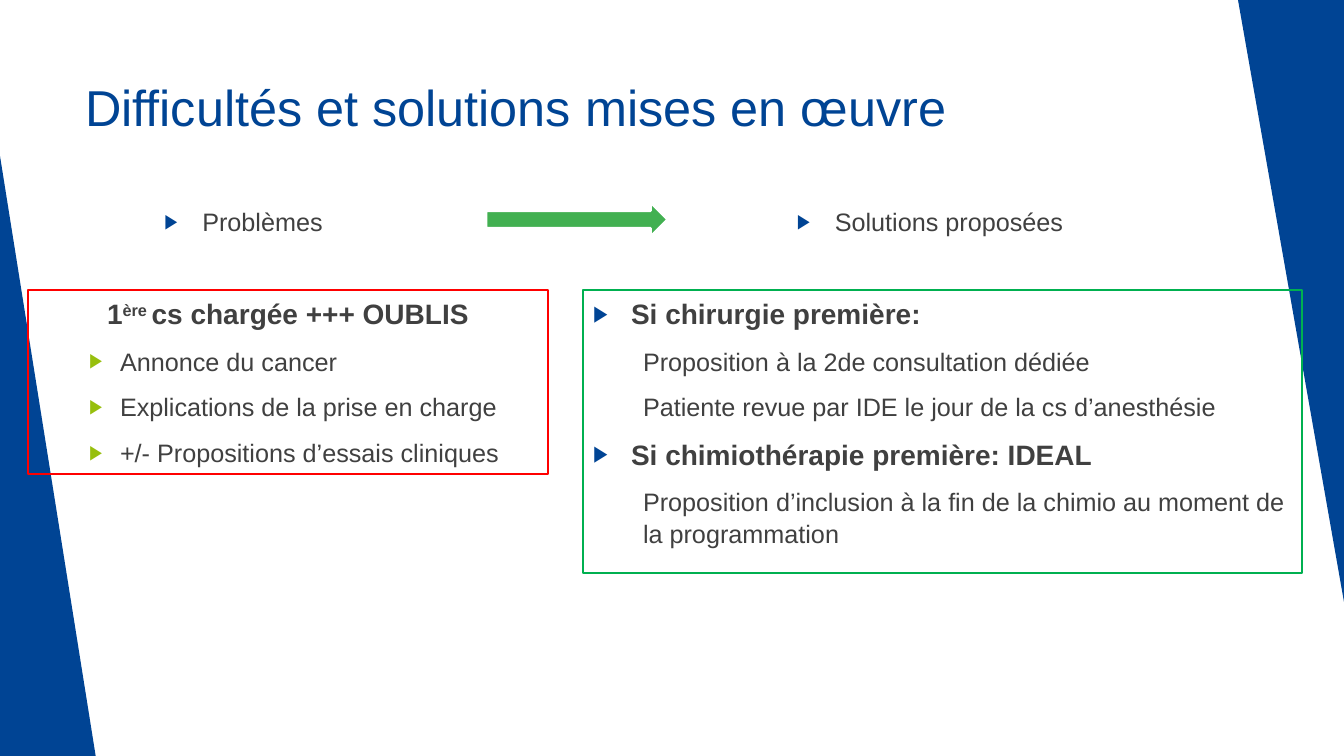
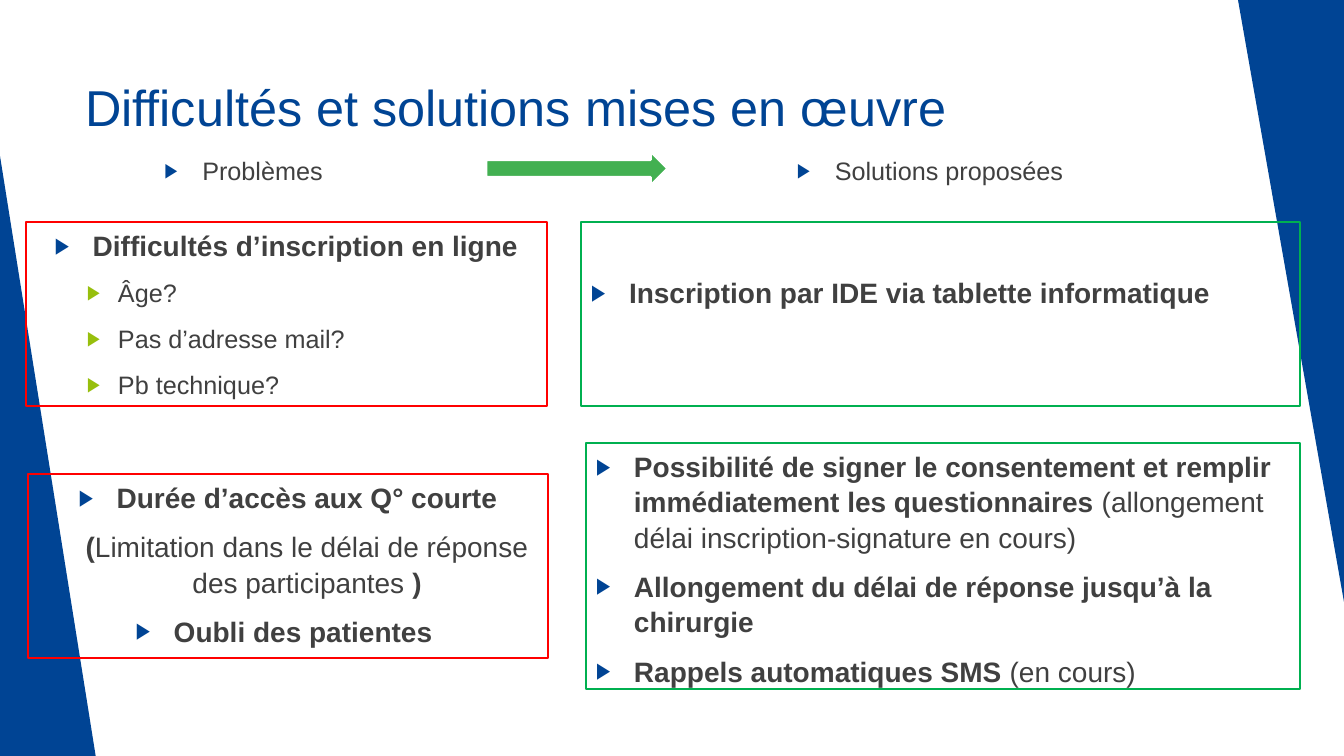
from dataclasses import dataclass
from typing import Optional

from lxml.etree import SubElement
from pptx import Presentation
from pptx.dml.color import RGBColor
from pptx.enum.shapes import MSO_SHAPE as Preset
from pptx.enum.text import MSO_ANCHOR as Anchor, MSO_AUTO_SIZE as AutoSize, PP_ALIGN as Align
from pptx.oxml.ns import qn
from pptx.util import Emu, Pt

EMU_PER_PX = 914400 / 100.8
FONT = "Arial"
TITLE = "Difficultés et solutions mises en œuvre"
COMPARISON_LAYOUT = 4

BLUE = RGBColor(0x00, 0x44, 0x94)
LIME = RGBColor(0x97, 0xBF, 0x0D)
TEXT_GREY = RGBColor(0x40, 0x40, 0x40)
PROBLEM_RED = RGBColor(0xFF, 0x00, 0x00)
SOLUTION_GREEN = RGBColor(0x00, 0xB0, 0x50)
ARROW_GREEN = RGBColor(0x42, 0xB0, 0x51)
WHITE = RGBColor(0xFF, 0xFF, 0xFF)


@dataclass(frozen=True)
class Style:
    size: int = 20
    bold: bool = True
    bullet: Optional[RGBColor] = BLUE
    margin: int = 38
    indent: int = -38
    level: int = 0
    align: Align = Align.LEFT
    color: RGBColor = TEXT_GREY
    space_before: int = 10
    line_spacing: float = 1.05


TITLE_STYLE = Style(size=36, bold=False, bullet=None, margin=0, indent=0, color=BLUE)
COLUMN_HEAD = Style(size=18, bold=False, align=Align.CENTER)
POINT = Style()
CENTRED_POINT = Style(align=Align.CENTER)
CENTRED_LINE = Style(bullet=None, margin=0, indent=0, align=Align.CENTER)
CENTRED_NOTE = Style(bullet=None, indent=0, align=Align.CENTER)
SUB_POINT = Style(size=18, bold=False, bullet=LIME, margin=82, indent=-31, level=1)
SUB_LINE = Style(size=18, bold=False, bullet=None, margin=50, indent=0, level=1)

BOLD, REGULAR, SUPERSCRIPT = "bold", "regular", "superscript"


def px(length):
    return Emu(round(length * EMU_PER_PX))


def place(shape, box):
    shape.left, shape.top, shape.width, shape.height = map(px, box)


def set_bullet(properties, color):
    if color is None:
        SubElement(properties, qn("a:buNone"))
        return
    fill = SubElement(properties, qn("a:buClr"))
    SubElement(fill, qn("a:srgbClr"), val=str(color))
    SubElement(properties, qn("a:buSzPct"), val="80000")
    SubElement(properties, qn("a:buFont"), typeface=FONT)
    SubElement(properties, qn("a:buChar"), char="▶")


def add_run(paragraph, text, look):
    run = paragraph.add_run()
    run.text = text
    if look == SUPERSCRIPT:
        run._r.get_or_add_rPr().set("baseline", "30000")
    else:
        run.font.bold = look == BOLD


def write_paragraph(paragraph, content, style, first):
    properties = paragraph._p.get_or_add_pPr()
    properties.set("marL", str(px(style.margin)))
    properties.set("indent", str(px(style.indent)))
    set_bullet(properties, style.bullet)
    paragraph.level = style.level
    paragraph.alignment = style.align
    paragraph.line_spacing = style.line_spacing
    paragraph.space_before = Pt(0 if first else style.space_before)
    paragraph.space_after = Pt(0)
    font = paragraph.font
    font.name, font.size = FONT, Pt(style.size)
    font.color.rgb = style.color
    font.bold = style.bold
    if isinstance(content, str):
        paragraph.add_run().text = content
    else:
        for text, look in content:
            add_run(paragraph, text, look)


def write_text(shape, lines, top_inset=5):
    frame = shape.text_frame
    frame.word_wrap = True
    frame.auto_size = AutoSize.NONE
    frame.vertical_anchor = Anchor.TOP
    frame.margin_left = frame.margin_right = px(10)
    frame.margin_top, frame.margin_bottom = px(top_inset), px(5)
    for index, (content, style) in enumerate(lines):
        paragraph = frame.add_paragraph() if index else frame.paragraphs[0]
        write_paragraph(paragraph, content, style, index == 0)


def fill_placeholder(slide, number, box, lines):
    shape = slide.placeholders[number]
    place(shape, box)
    write_text(shape, lines)


def fill_frame(shape, box, color, lines, top_inset=5):
    place(shape, box)
    shape.line.color.rgb = color
    shape.line.width = Pt(1.5)
    write_text(shape, lines, top_inset)


def add_frame(slide, box, color, lines):
    fill_frame(slide.shapes.add_textbox(*map(px, box)), box, color, lines)


def add_preset(slide, preset, box, color):
    shape = slide.shapes.add_shape(preset, *map(px, box))
    shape.shadow.inherit = False
    shape.fill.solid()
    shape.fill.fore_color.rgb = color
    shape.line.fill.background()
    return shape


def add_master_bands(presentation, slide):
    left = add_preset(slide, Preset.RIGHT_TRIANGLE, (0, 156, 96, 602), BLUE)
    right = add_preset(slide, Preset.RIGHT_TRIANGLE, (1238, 0, 106, 602), BLUE)
    right.rotation = 180
    first_master_shape = presentation.slide_master.shapes[0].element
    for band in (left, right):
        first_master_shape.addprevious(band.element)


def add_comparison(presentation, heading_top):
    slide = presentation.slides.add_slide(presentation.slide_layouts[COMPARISON_LAYOUT])
    fill_placeholder(slide, 0, (75, 68, 948, 145), [(TITLE, TITLE_STYLE)])
    fill_placeholder(slide, 1, (96, heading_top, 295, 71), [("Problèmes", COLUMN_HEAD)])
    fill_placeholder(slide, 3, (707, heading_top, 446, 71), [("Solutions proposées", COLUMN_HEAD)])
    arrow = add_preset(slide, Preset.RIGHT_ARROW, (486, heading_top + 2, 182, 35), ARROW_GREEN)
    arrow.line.color.rgb = WHITE
    arrow.line.width = Pt(2)
    return slide


def build_consultation_slide(presentation):
    slide = add_comparison(presentation, 200)
    add_master_bands(presentation, slide)
    fill_frame(slide.placeholders[2], (28, 290, 520, 184), PROBLEM_RED, [
        ([("1", BOLD), ("ère ", SUPERSCRIPT), ("cs chargée +++ OUBLIS", BOLD)], CENTRED_LINE),
        ("Annonce du cancer", SUB_POINT),
        ("Explications de la prise en charge", SUB_POINT),
        ("+/- Propositions d’essais cliniques", SUB_POINT),
    ])
    fill_frame(slide.placeholders[4], (583, 290, 719, 283), SOLUTION_GREEN, [
        ("Si chirurgie première:", POINT),
        ("Proposition à la 2de consultation dédiée", SUB_LINE),
        ("Patiente revue par IDE le jour de la cs d’anesthésie", SUB_LINE),
        ("Si chimiothérapie première: IDEAL", POINT),
        ("Proposition d’inclusion à la fin de la chimio au moment de la programmation", SUB_LINE),
    ])


def build_registration_slide(presentation):
    slide = add_comparison(presentation, 149)
    fill_frame(slide.placeholders[2], (26, 222, 521, 184), PROBLEM_RED, [
        ("Difficultés d’inscription en ligne", CENTRED_POINT),
        ("Âge?", SUB_POINT),
        ("Pas d’adresse mail?", SUB_POINT),
        ("Pb technique?", SUB_POINT),
    ])
    fill_frame(slide.placeholders[4], (581, 222, 719, 184), SOLUTION_GREEN, [
        ("Inscription par IDE via tablette informatique", POINT),
    ], top_inset=52)
    add_frame(slide, (28, 474, 520, 184), PROBLEM_RED, [
        ("Durée d’accès aux Q° courte", CENTRED_POINT),
        ([("(", BOLD), ("Limitation dans le délai de réponse des participantes ", REGULAR),
          (")", BOLD)], CENTRED_NOTE),
        ("Oubli des patientes ", CENTRED_POINT),
    ])
    add_frame(slide, (586, 443, 714, 246), SOLUTION_GREEN, [
        ([("Possibilité de signer le consentement et remplir immédiatement les questionnaires ", BOLD),
          ("(allongement délai inscription-signature en cours)", REGULAR)], POINT),
        ("Allongement du délai de réponse jusqu’à la chirurgie", POINT),
        ([("Rappels automatiques SMS ", BOLD), ("(en cours)", REGULAR)], POINT),
    ])


def main():
    presentation = Presentation()
    presentation.slide_width, presentation.slide_height = px(1344), px(756)
    build_consultation_slide(presentation)
    build_registration_slide(presentation)
    presentation.save("out.pptx")


if __name__ == "__main__":
    main()
